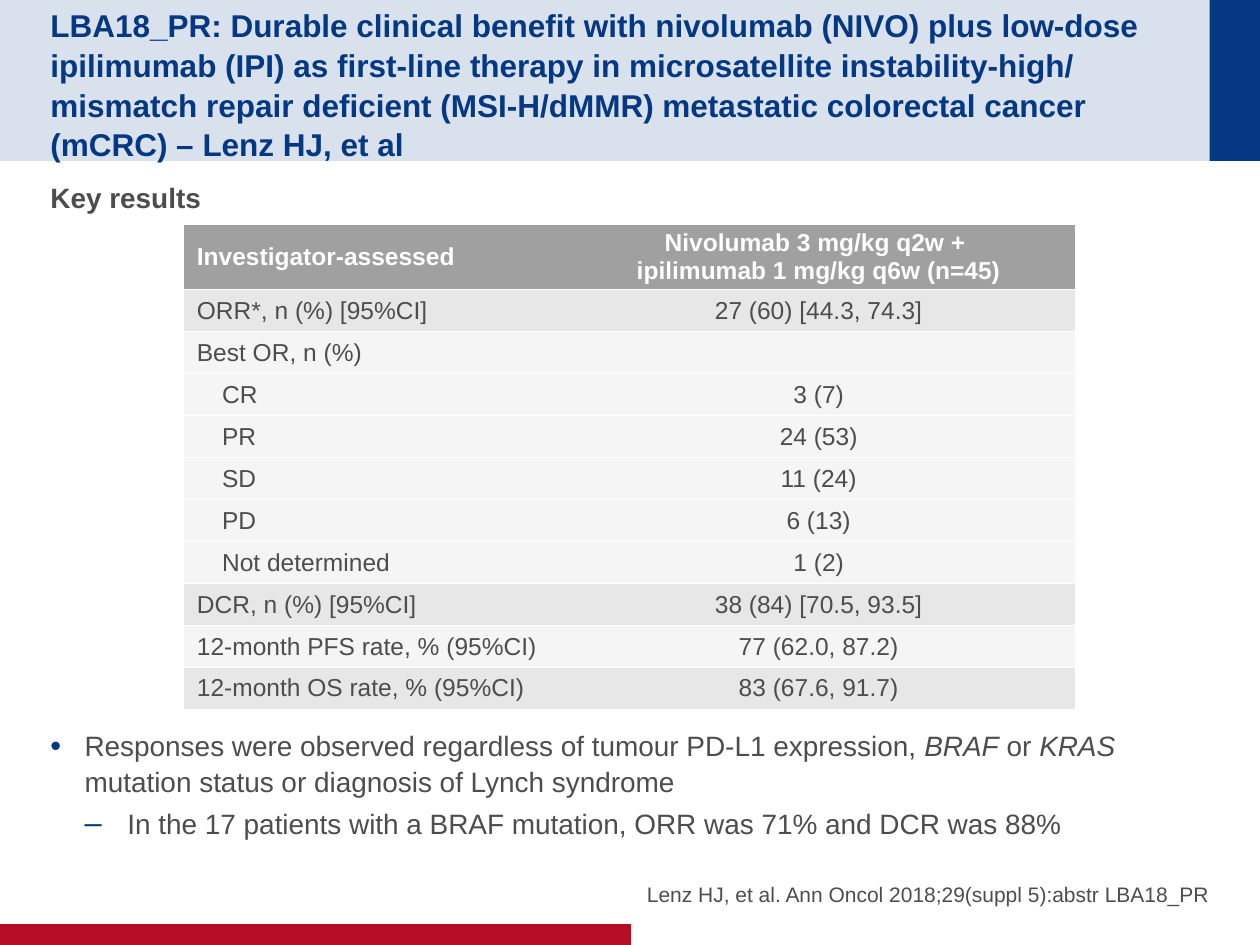
from lxml import etree
from pptx import Presentation
from pptx.dml.color import RGBColor
from pptx.enum import shapes, text
from pptx.oxml import ns
from pptx.util import Pt

# Content
TITLE = ("LBA18_PR: Durable clinical benefit with nivolumab (NIVO) plus low-dose "
         "ipilimumab (IPI) as first-line therapy in microsatellite instability-high/ "
         "mismatch repair deficient (MSI-H/dMMR) metastatic colorectal cancer "
         "(mCRC) – Lenz HJ, et al")
HEADING = "Key results"
HEADER = ("Investigator-assessed",
          "Nivolumab 3 mg/kg q2w + \vipilimumab 1 mg/kg q6w (n=45)")
# label, value, shaded row, indented label
RESULTS = [
    ("ORR*, n (%) [95%CI]", "27 (60) [44.3, 74.3]", True, False),
    ("Best OR, n (%)", "", False, False),
    ("CR", "3 (7)", False, True),
    ("PR", "24 (53)", False, True),
    ("SD", "11 (24)", False, True),
    ("PD", "6 (13)", False, True),
    ("Not determined", "1 (2)", False, True),
    ("DCR, n (%) [95%CI]", "38 (84) [70.5, 93.5]", True, False),
    ("12-month PFS rate, % (95%CI)", "77 (62.0, 87.2)", False, False),
    ("12-month OS rate, % (95%CI)", "83 (67.6, 91.7)", True, False),
]
# spans as (text, italic)
RESPONSES = [
    ("Responses were observed regardless of tumour PD-L1 expression, ", False),
    ("BRAF", True), (" or ", False), ("KRAS", True),
    (" mutation status or diagnosis of Lynch syndrome", False),
]
SUBGROUP = [("In the 17 patients with a BRAF mutation, ORR was 71% and DCR was 88%", False)]
CITATION = "Lenz HJ, et al. Ann Oncol 2018;29(suppl 5):abstr LBA18_PR"

# Format
NAVY, RED, GREY, WHITE = "043882", "B60D27", "4D4D4D", "FFFFFF"
HEAD_FILL, SHADED, PLAIN = "A0A0A0", "E7E7E7", "F5F5F5"
BANDS = [(0, 0, 720, 92, "D9E1EC"), (691.2, 0, 28.8, 92, NAVY), (0, 528, 360.7, 12, RED)]
LEFT, CENTER, RIGHT = text.PP_ALIGN.LEFT, text.PP_ALIGN.CENTER, text.PP_ALIGN.RIGHT
TOP, MIDDLE, BOTTOM = text.MSO_ANCHOR.TOP, text.MSO_ANCHOR.MIDDLE, text.MSO_ANCHOR.BOTTOM


def color(value):
    return RGBColor.from_string(value)


def apply(target, values):
    for name, value in values.items():
        setattr(target, name, value)


def place(box, left, top, width, height, anchor, inset_top=0.0):
    apply(box, dict(left=Pt(left), top=Pt(top), width=Pt(width), height=Pt(height)))
    apply(box.text_frame, dict(
        word_wrap=True, auto_size=text.MSO_AUTO_SIZE.NONE, vertical_anchor=anchor,
        margin_left=0, margin_right=0, margin_top=Pt(inset_top), margin_bottom=0))
    return box.text_frame


def write(para, spans, size, ink=GREY, bold=False, align=LEFT, spacing=1.0,
          after=0, indent=(0, 0), bullet=None):
    apply(para, dict(alignment=align, line_spacing=spacing,
                     space_before=Pt(0), space_after=Pt(after)))
    for words, italic in spans:
        span = para.add_run()
        span.text = words
        apply(span.font, dict(name="Arial", size=Pt(size), bold=bold, italic=italic))
        span.font.color.rgb = color(ink)
    props = para._p.get_or_add_pPr()
    props.set("marL", str(Pt(indent[0])))
    props.set("indent", str(Pt(indent[1])))
    if bullet:
        tint = etree.SubElement(props, ns.qn("a:buClr"))
        etree.SubElement(tint, ns.qn("a:srgbClr"), val=NAVY)
        etree.SubElement(props, ns.qn("a:buSzPct"), val="110000")
        etree.SubElement(props, ns.qn("a:buFont"), typeface="Arial")
        etree.SubElement(props, ns.qn("a:buChar"), char=bullet)
    else:
        etree.SubElement(props, ns.qn("a:buNone"))


def write_cell(cell, words, fill, align, ink=GREY, bold=False, indent=0):
    apply(cell, dict(vertical_anchor=MIDDLE, margin_left=Pt(7.2), margin_right=Pt(7.2),
                     margin_top=Pt(2.6), margin_bottom=Pt(2.6)))
    # White rules between rows, none between columns
    props = cell._tc.get_or_add_tcPr()
    for side in "LRTB":
        line = etree.SubElement(props, ns.qn("a:ln" + side), w=str(Pt(1)))
        if side in "LR":
            etree.SubElement(line, ns.qn("a:noFill"))
        else:
            paint = etree.SubElement(line, ns.qn("a:solidFill"))
            etree.SubElement(paint, ns.qn("a:srgbClr"), val=WHITE)
    cell.fill.solid()
    cell.fill.fore_color.rgb = color(fill)
    para = cell.text_frame.paragraphs[0]
    para.font.size = Pt(14)
    write(para, [(words, False)] if words else [], 14, ink, bold, align, indent=(indent, 0))
    # A vertical tab in the words marks a line break
    if "\v" in words:
        span = para.runs[0]
        first, second = words.split("\v")
        span.text = first
        para.add_line_break()
        write(para, [(second, False)], 14, ink, bold, align)


deck = Presentation()
apply(deck, dict(slide_width=Pt(720), slide_height=Pt(540)))
page = deck.slides.add_slide(deck.slide_layouts.get_by_name("Comparison"))
heading, bullets, citation, spare = list(page.placeholders)[1:5]
spare.element.getparent().remove(spare.element)
title = page.shapes.title

# Coloured bands behind the text
for left, top, width, height, fill in BANDS:
    band = page.shapes.add_shape(shapes.MSO_SHAPE.RECTANGLE,
                                 Pt(left), Pt(top), Pt(width), Pt(height))
    band.shadow.inherit = False
    band.fill.solid()
    band.fill.fore_color.rgb = color(fill)
    band.line.fill.background()
    title.element.addprevious(band.element)

# Title, heading and citation
frame = place(title, 28.8, 14.4, 648.7, 63.4, MIDDLE, 3.6)
write(frame.paragraphs[0], [(TITLE, False)], 18, NAVY, bold=True, spacing=1.05)
frame = place(heading, 28.8, 98.6, 662.4, 26, TOP, 3.6)
write(frame.paragraphs[0], [(HEADING, False)], 16, bold=True, spacing=1.05)
frame = place(citation, 365.8, 480.2, 325.4, 38.2, BOTTOM)
write(frame.paragraphs[0], [(CITATION, False)], 12, align=RIGHT)

# Bulleted findings
frame = place(bullets, 28.8, 412, 662.4, 70, TOP, 3.6)
write(frame.paragraphs[0], RESPONSES, 16, spacing=1.05, after=4,
      indent=(19.5, -19.5), bullet="•")
para = frame.add_paragraph()
para.level = 1
write(para, SUBGROUP, 16, spacing=1.05, after=4, indent=(44, -24.5), bullet="–")

# Results table
HEAD_HEIGHT, ROW_HEIGHT, COLUMNS = 37.3, 24, (216, 293)
table = page.shapes.add_table(
    len(RESULTS) + 1, len(COLUMNS), Pt(105.3), Pt(128.3), Pt(sum(COLUMNS)),
    Pt(HEAD_HEIGHT + ROW_HEIGHT * len(RESULTS))).table
table.horz_banding = False
for column, width in zip(table.columns, COLUMNS):
    column.width = Pt(width)
for index, row in enumerate(table.rows):
    row.height = Pt(ROW_HEIGHT if index else HEAD_HEIGHT)
for column, (words, align) in enumerate(zip(HEADER, (LEFT, CENTER))):
    write_cell(table.cell(0, column), words, HEAD_FILL, align, WHITE, bold=True)
for row, (label, value, shaded, indented) in enumerate(RESULTS, 1):
    fill = SHADED if shaded else PLAIN
    write_cell(table.cell(row, 0), label, fill, LEFT, indent=14.4 if indented else 0)
    write_cell(table.cell(row, 1), value, fill, CENTER)

deck.save("out.pptx")
